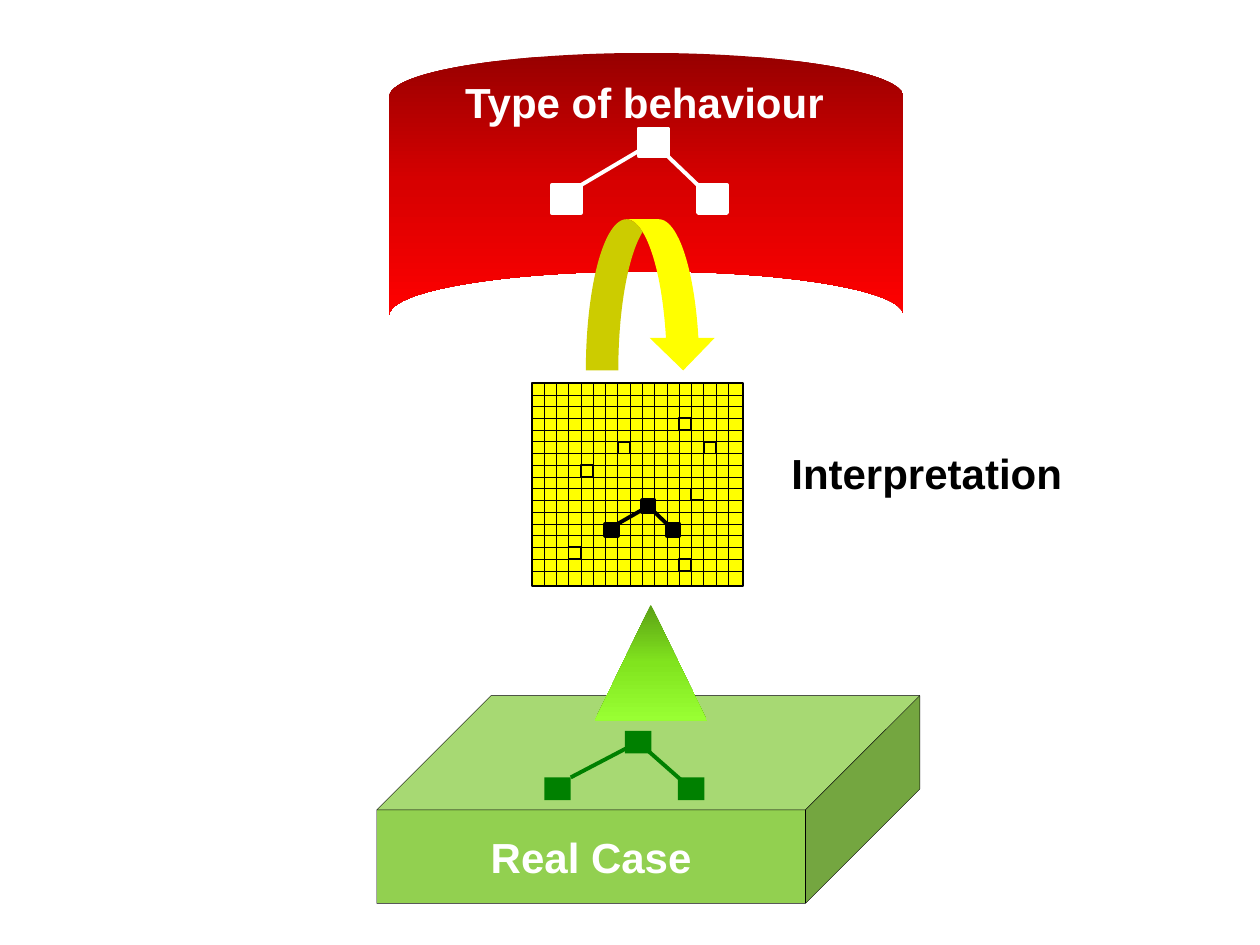
from copy import deepcopy

from pptx import Presentation
from pptx import util as u
from pptx.dml.color import RGBColor
from pptx.enum import shapes, text
from pptx.oxml.ns import qn
from pptx.oxml.xmlchemy import OxmlElement

COLORS = {
    "white": "FFFFFF", "black": "000000", "yellow": "FFFF00",
    "case": "92D050", "case_node": "008000",
}
REDS = ("970000", "D70000", "FF0000")
GREENS = ("5BA015", "81E41E", "99FF33")

# The slide is laid out on 10 columns by 7.5 rows of square units.
COLUMNS, ROWS = 10, 7.5
UNIT = u.Inches(1)

# The interpretation map is a fine mesh of cells.
MAP_LEFT, MAP_TOP, MAP_WIDTH, MAP_HEIGHT = 4.22, 3.04, 1.68, 1.61
MESH_LINES = 16
CELL_WIDTH, CELL_HEIGHT = 1.56 / MESH_LINES, 1.49 / MESH_LINES
MARKED_CELLS = [(4, 7), (7, 5), (12, 15), (13, 9), (12, 3), (3, 14), (14, 5)]
TREE_CELLS = [(9, 10), (6, 12), (11, 12)]


def units(*lengths):
    return [round(length * UNIT) for length in lengths]


def rgb(name):
    return RGBColor.from_string(COLORS[name])


def add_shape(parent, kind, area, fill=None, line=None, weight=1):
    shape = parent.shapes.add_shape(kind, *units(*area))
    shape.shadow.inherit = False
    if fill:
        shape.fill.solid()
        shape.fill.fore_color.rgb = rgb(fill)
    if line:
        shape.line.color.rgb = rgb(line)
        shape.line.width = u.Pt(weight)
    else:
        shape.line.fill.background()
    return shape


def add_line(parent, start, end, color, weight):
    line = parent.shapes.add_connector(
        shapes.MSO_CONNECTOR.STRAIGHT, *units(*start, *end))
    line.line.color.rgb = rgb(color)
    line.line.width = u.Pt(weight)
    line._element.spPr.append(OxmlElement("a:effectLst"))


def shade(shape, hexes, angle):
    """Fill with a gradient of three evenly spaced colours."""
    shape.fill.gradient()
    shape.fill.gradient_angle = angle
    stops = shape._element.spPr.find(".//" + qn("a:gsLst"))
    stops.insert(1, deepcopy(stops[0]))
    for index, (stop, value) in enumerate(zip(shape.fill.gradient_stops, hexes)):
        stop.position = index / 2
        stop.color.rgb = RGBColor.from_string(value)


def write(box, words, color="black", size=24, font="Arial", bold=True):
    frame = box.text_frame
    frame.word_wrap = True
    para = frame.paragraphs[0]
    para.alignment = text.PP_ALIGN.CENTER
    span = para.add_run()
    span.text = words
    span.font.name, span.font.size, span.font.bold = font, u.Pt(size), bold
    span.font.color.rgb = rgb(color)


def add_label(page, words, left, top, **style):
    box = page.shapes.add_textbox(*units(left, top, 4.09, 0.5))
    write(box, words, **style)
    box.text_frame.auto_size = text.MSO_AUTO_SIZE.SHAPE_TO_FIT_TEXT


def add_tree(parent, corners, width, height, color, outline=True):
    """Join a root node to its left and right children."""
    root, left, right = corners

    def middle(corner):
        return corner[0] + width / 2, corner[1] + height / 2

    add_line(parent, (left[0] + width, left[1]), middle(root), color, 2.25)
    add_line(parent, middle(right), middle(root), color, 2.25)
    for corner in corners:
        add_shape(parent, shapes.MSO_SHAPE.RECTANGLE, (*corner, width, height),
                  color, color if outline else None, 2.25)


def cell_corner(column, row):
    return MAP_LEFT + column * CELL_WIDTH, MAP_TOP + row * CELL_HEIGHT


def add_behaviour(page):
    banner = add_shape(page, shapes.MSO_SHAPE.FLOWCHART_STORED_DATA,
                       (4.09, -0.58, 2.08, 4.08))
    banner.rotation = 90
    shade(banner, REDS, 0)
    add_tree(page, [(5.07, 1.02), (4.38, 1.47), (5.54, 1.47)], 0.23, 0.22, "white")
    add_label(page, "Type of behaviour", 3.07, 0.56, color="white")
    add_shape(page, shapes.MSO_SHAPE.CURVED_DOWN_ARROW,
              (4.65, 1.74, 1.03, 1.2), "yellow")


def add_interpretation(page):
    square = shapes.MSO_SHAPE.RECTANGLE
    add_shape(page, square, (MAP_LEFT, MAP_TOP, MAP_WIDTH, MAP_HEIGHT),
              "yellow", "black")
    for index in range(1, MESH_LINES + 1):
        x, y = cell_corner(index, index)
        add_line(page, (x, MAP_TOP), (x, MAP_TOP + MAP_HEIGHT), "black", 0.25)
        add_line(page, (MAP_LEFT, y), (MAP_LEFT + MAP_WIDTH, y), "black", 0.25)
    for cell in MARKED_CELLS:
        add_shape(page, square, (*cell_corner(*cell), CELL_WIDTH, CELL_HEIGHT),
                  "yellow", "black")
    add_tree(page, [cell_corner(*cell) for cell in TREE_CELLS],
             CELL_WIDTH, CELL_HEIGHT, "black")
    add_label(page, "Interpretation", 5.31, 3.5)


def add_real_case(page):
    group = page.shapes.add_group_shape()
    block = add_shape(group, shapes.MSO_SHAPE.CUBE, (2.99, 5.52, 4.31, 1.65),
                      "case", "black", 0.25)
    block.adjustments[0] = 0.55
    block.text_frame.vertical_anchor = text.MSO_ANCHOR.MIDDLE
    write(block, "Real Case", color="white")
    add_tree(group, [(4.96, 5.8), (4.32, 6.17), (5.38, 6.17)], 0.21, 0.18,
             "case_node", outline=False)
    pointer = add_shape(page, shapes.MSO_SHAPE.FLOWCHART_EXTRACT,
                        (4.72, 4.8, 0.89, 0.92))
    shade(pointer, GREENS, 270)


def main():
    deck = Presentation()
    deck.slide_width, deck.slide_height = units(COLUMNS, ROWS)
    page = deck.slides.add_slide(deck.slide_layouts.get_by_name("Blank"))
    add_behaviour(page)
    add_interpretation(page)
    add_real_case(page)
    deck.save("out.pptx")


if __name__ == "__main__":
    main()
